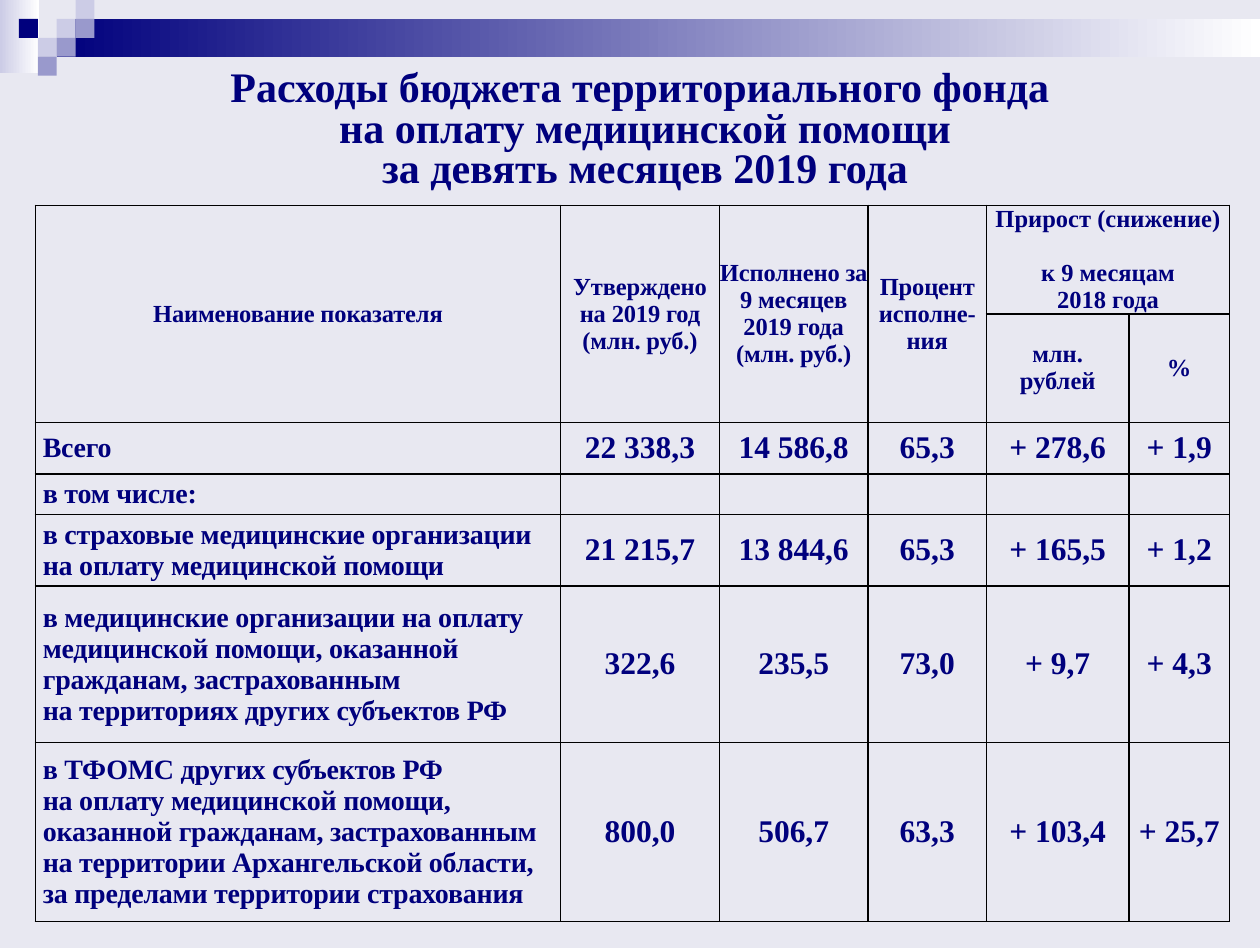
from lxml import etree
from pptx import Presentation
from pptx.dml.color import RGBColor
from pptx.enum.shapes import MSO_SHAPE
from pptx.enum.text import MSO_ANCHOR, PP_ALIGN
from pptx.oxml.ns import qn
from pptx.util import Inches, Pt

RECT = MSO_SHAPE.RECTANGLE
MIDDLE = MSO_ANCHOR.MIDDLE
LEFT, CENTER = PP_ALIGN.LEFT, PP_ALIGN.CENTER
NAVY = RGBColor(0x00, 0x00, 0x7D)
LILAC = RGBColor(0xCC, 0xCC, 0xE6)
VIOLET = RGBColor(0x99, 0x99, 0xCC)
WHITE = RGBColor(0xFF, 0xFF, 0xFF)
PALE = RGBColor(0xE8, 0xE8, 0xF1)
FONT = "Times New Roman"
UNIT = 0.15

BANDS = [(0, 0, 0.31, 0.58, LILAC), (3 * UNIT, UNIT, 9.55, 2 * UNIT, NAVY)]
TILES = [
    (3, 1, LILAC), (4, 0, LILAC), (4, 1, VIOLET), (2, 2, LILAC),
    (1, 1, NAVY), (3, 2, VIOLET), (2, 3, VIOLET),
]
COLS = [4.17, 1.26, 1.18, 0.94, 1.13, 0.8]
ROWS = [0.86, 0.86, 0.41, 0.32, 0.57, 1.24, 1.42]
TITLE = (
    "Расходы бюджета территориального фонда \v"
    "на оплату медицинской помощи\vза девять месяцев 2019 года"
)
HEADS = [
    "Наименование показателя",
    "Утверждено\nна 2019 год\n(млн. руб.)",
    "Исполнено за\n9 месяцев 2019 года\n(млн. руб.)",
    "Процент исполне-ния",
    "Прирост (снижение)\nк 9 месяцам\n2018 года",
]
SUBS = ["млн. рублей", "%"]
DATA = [
    ["Всего", "22 338,3", "14 586,8", "65,3", "+ 278,6", "+ 1,9"],
    ["в том числе:", "", "", "", "", ""],
    ["в страховые медицинские организации на оплату медицинской помощи",
     "21 215,7", "13 844,6", "65,3", "+ 165,5", "+ 1,2"],
    ["в медицинские организации на оплату медицинской помощи, оказанной "
     "гражданам, застрахованным\nна территориях других субъектов РФ",
     "322,6", "235,5", "73,0", "+ 9,7", "+ 4,3"],
    ["в ТФОМС других субъектов РФ\vна оплату медицинской помощи, оказанной "
     "гражданам, застрахованным на территории Архангельской области,\v"
     "за пределами территории страхования",
     "800,0", "506,7", "63,3", "+ 103,4", "+ 25,7"],
]


def add_box(slide, x, y, w, h, color, fade=False):
    box = slide.shapes.add_shape(RECT, Inches(x), Inches(y), Inches(w), Inches(h))
    box.shadow.inherit = False
    box.line.fill.background()
    if fade:
        box.fill.gradient()
        box.fill.gradient_angle = 0
        for stop, tone in zip(box.fill.gradient_stops, (color, WHITE)):
            stop.color.rgb = tone
    else:
        box.fill.solid()
        box.fill.fore_color.rgb = color


def style(frame, size, align, tight=False):
    for para in frame.paragraphs:
        para.alignment = align
        for run in para.runs:
            font = run.font
            font.name, font.size, font.bold = FONT, Pt(size), True
            font.color.rgb = NAVY
            if tight:
                run._r.get_or_add_rPr().set("spc", "-10")


def add_title(slide):
    title = slide.shapes.title
    title.left, title.top = Inches(0.67), Inches(0.45)
    title.width, title.height = Inches(8.9), Inches(1.18)
    frame = title.text_frame
    frame.text = TITLE
    frame.vertical_anchor = MIDDLE
    frame.paragraphs[0].line_spacing = 0.8
    style(frame, 24, CENTER)


def frame_cell(cell):
    props = cell._tc.get_or_add_tcPr()
    for side in ("a:lnL", "a:lnR", "a:lnT", "a:lnB"):
        line = etree.SubElement(props, qn(side), w=str(Pt(1)))
        fill = etree.SubElement(line, qn("a:solidFill"))
        etree.SubElement(fill, qn("a:srgbClr"), val="000000")
    cell.fill.background()
    cell.vertical_anchor = MIDDLE
    cell.margin_left = cell.margin_right = Inches(0.06)
    cell.margin_top = cell.margin_bottom = 0


def write(cell, text, size, align=CENTER, tight=False):
    cell.text = text
    style(cell.text_frame, size, align, tight)


def add_grid(slide):
    table = slide.shapes.add_table(
        len(ROWS), len(COLS), Inches(0.28), Inches(1.63),
        Inches(sum(COLS)), Inches(sum(ROWS))
    ).table
    table.first_row = table.horz_banding = False
    for col, width in zip(table.columns, COLS):
        col.width = Inches(width)
    for row, height in zip(table.rows, ROWS):
        row.height = Inches(height)
    for cell in table.iter_cells():
        frame_cell(cell)

    for c, text in enumerate(HEADS):
        end = (0, 5) if c == 4 else (1, c)
        table.cell(0, c).merge(table.cell(*end))
        write(table.cell(0, c), text, 14, tight=c < 4)
    wide = table.cell(0, 2)
    wide.margin_left = wide.margin_right = 0
    table.cell(0, 4).text_frame.paragraphs[0].space_after = Pt(15.4)
    for c, text in enumerate(SUBS, 4):
        write(table.cell(1, c), text, 14)

    for r, (label, *values) in enumerate(DATA, 2):
        write(table.cell(r, 0), label, 16, LEFT, True)
        for c, value in enumerate(values, 1):
            write(table.cell(r, c), value, 18)


def main():
    deck = Presentation()
    deck.slide_width, deck.slide_height = Inches(10), Inches(7.52)
    slide = deck.slides.add_slide(deck.slide_layouts[5])
    slide.background.fill.solid()
    slide.background.fill.fore_color.rgb = PALE
    for x, y, w, h, color in BANDS:
        add_box(slide, x, y, w, h, color, True)
    for col, row, color in TILES:
        add_box(slide, col * UNIT, row * UNIT, UNIT, UNIT, color)
    add_title(slide)
    add_grid(slide)
    deck.save("out.pptx")


if __name__ == "__main__":
    main()
